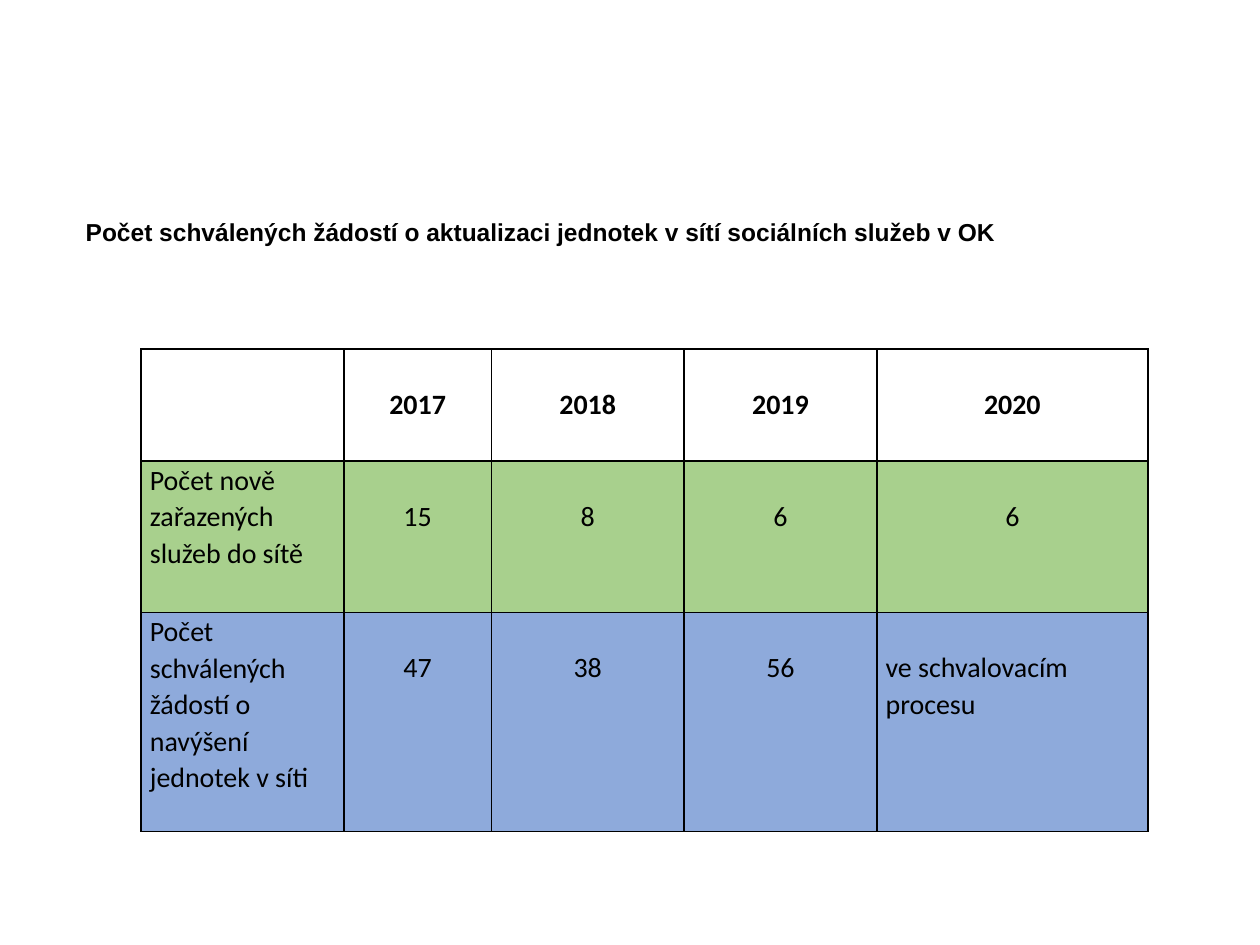
from pptx import Presentation
from pptx.dml.color import RGBColor
from pptx.enum.text import MSO_ANCHOR, PP_ALIGN
from pptx.oxml import parse_xml
from pptx.oxml.ns import nsdecls
from pptx.util import Inches, Pt

BLACK = RGBColor(0, 0, 0)
GREEN = RGBColor(0xA8, 0xD0, 0x8D)
BLUE = RGBColor(0x8E, 0xAA, 0xDB)

WIDE, HIGH = Inches(10), Inches(7.5)
COLS = [1.61, 1.17, 1.53, 1.53, 2.15]
ROWS = [0.89, 1.2, 1.74]
LEFT, TOP = 1.12, 2.77
SIDE, DROP = Inches(0.07), Inches(0.29)

TITLE = "Počet schválených žádostí o aktualizaci jednotek v sítí sociálních služeb v OK"
DATA = [
    (None, ["", "2017", "2018", "2019", "2020"]),
    (GREEN, ["Počet nově zařazených služeb do sítě", "15", "8", "6", "6"]),
    (BLUE, ["Počet schválených žádostí o navýšení jednotek v síti",
            "47", "38", "56", "ve schvalovacím procesu"]),
]


def set_font(para, name, size, bold):
    font = para.font
    font.name, font.size, font.bold = name, Pt(size), bold
    font.color.rgb = BLACK


def add_title(slide):
    title = slide.shapes.title
    title.left, title.top = Inches(0.58), Inches(1.67)
    title.width, title.height = Inches(8.5), Inches(5.5)
    frame = title.text_frame
    frame.text = TITLE
    frame.word_wrap = True
    frame.vertical_anchor = MSO_ANCHOR.TOP
    para = frame.paragraphs[0]
    para.alignment = PP_ALIGN.LEFT
    set_font(para, "Arial", 14, True)


def add_lines(cell):
    props = cell._tc.get_or_add_tcPr()
    for side in "LRTB":
        props.append(parse_xml(
            f'<a:ln{side} {nsdecls("a")} w="{Pt(1)}"><a:solidFill>'
            f'<a:srgbClr val="{BLACK}"/></a:solidFill></a:ln{side}>'))


def fill_cell(cell, text, color, head, label):
    add_lines(cell)
    if color is None:
        cell.fill.background()
    else:
        cell.fill.solid()
        cell.fill.fore_color.rgb = color
    cell.margin_left = cell.margin_right = SIDE
    cell.margin_top = 0 if label else DROP
    cell.margin_bottom = 0
    cell.text = text
    para = cell.text_frame.paragraphs[0]
    para.line_spacing = 1.07
    if text.isdigit():
        para.alignment = PP_ALIGN.CENTER
    set_font(para, "Calibri", 16, head)


def add_grid(slide):
    frame = slide.shapes.add_table(
        len(ROWS), len(COLS), Inches(LEFT), Inches(TOP),
        Inches(sum(COLS)), Inches(sum(ROWS)))
    table = frame.table
    table.first_row = table.horz_banding = False
    for col, size in zip(table.columns, COLS):
        col.width = Inches(size)
    for row, size in zip(table.rows, ROWS):
        row.height = Inches(size)
    for r, (color, texts) in enumerate(DATA):
        for c, text in enumerate(texts):
            fill_cell(table.cell(r, c), text, color, r == 0, c == 0)


def main():
    deck = Presentation()
    deck.slide_width, deck.slide_height = WIDE, HIGH
    slide = deck.slides.add_slide(deck.slide_layouts[5])
    add_title(slide)
    add_grid(slide)
    deck.save("out.pptx")


if __name__ == "__main__":
    main()
